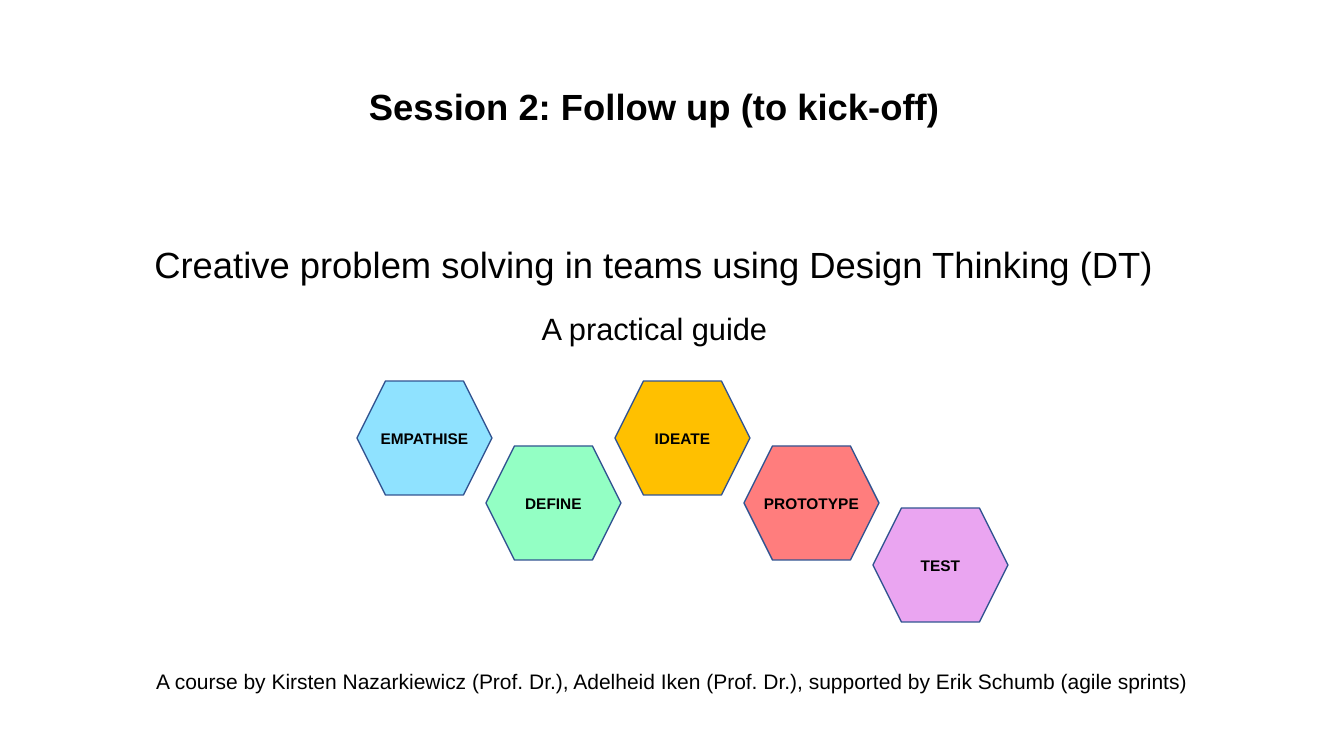
from pptx import Presentation
from pptx.dml.color import RGBColor
from pptx.enum.shapes import MSO_SHAPE
from pptx.enum.text import MSO_ANCHOR, PP_ALIGN
from pptx.util import Emu, Pt

PX = 914400 / 100.8
FONT = "Arial"
COLOURS = {
    "text": "000000",
    "outline": "325491",
    "empathise": "8FE2FF",
    "define": "93FFC4",
    "ideate": "FFC000",
    "prototype": "FF7D7D",
    "test": "EAA5F1",
}
PHASES = [("EMPATHISE", 0), ("DEFINE", 65), ("IDEATE", 0), ("PROTOTYPE", 65), ("TEST", 127)]


def px(length):
    """Turn a length in px into EMU."""
    return Emu(round(length * PX))


def colour(name):
    """Look up a colour by name."""
    return RGBColor.from_string(COLOURS[name])


def place(shape, box):
    """Move and size a shape to a box given in px."""
    shape.left, shape.top, shape.width, shape.height = map(px, box)


def format_paragraph(para, size, bold=False):
    """Centre a paragraph and set its font."""
    para.alignment = PP_ALIGN.CENTER
    para.font.name = FONT
    para.font.size = Pt(size)
    para.font.bold = bold
    para.font.color.rgb = colour("text")


def add_title(page, box, text):
    """Fill the title placeholder with the session heading."""
    title = page.shapes.title
    place(title, box)
    title.text_frame.text = text
    title.text_frame.vertical_anchor = MSO_ANCHOR.TOP
    para = title.text_frame.paragraphs[0]
    format_paragraph(para, 26, bold=True)
    para.line_spacing = 1.2
    para.space_before = Pt(0)


def add_subject(page, box, subject, subtitle):
    """Add the course subject with its subtitle below."""
    frame = page.shapes.add_textbox(*map(px, box)).text_frame
    frame.word_wrap = True
    frame.text = f"{subject}\n{subtitle}"
    for para, size, gap in zip(frame.paragraphs, (26, 22), (0, 12)):
        format_paragraph(para, size)
        para.line_spacing = 1.2
        para.space_before = Pt(gap)


def add_phases(page, box):
    """Add the staggered hexagons of the process, evenly stepped across the box."""
    left, top, width, height = box
    hexagon_width, hexagon_height = 135, 114
    step = (width - hexagon_width) / (len(PHASES) - 1)
    for index, (label, drop) in enumerate(PHASES):
        hexagon = page.shapes.add_shape(
            MSO_SHAPE.HEXAGON, px(left + index * step), px(top + drop),
            px(hexagon_width), px(hexagon_height))
        hexagon.shadow.inherit = False
        hexagon.fill.solid()
        hexagon.fill.fore_color.rgb = colour(label.lower())
        hexagon.line.color.rgb = colour("outline")
        hexagon.line.width = Pt(1)
        frame = hexagon.text_frame
        frame.word_wrap = False
        frame.vertical_anchor = MSO_ANCHOR.MIDDLE
        frame.margin_left = frame.margin_right = 0
        frame.text = label
        format_paragraph(frame.paragraphs[0], 11, bold=True)


def add_credits(page, box, text):
    """Add the line that names the course leaders."""
    frame = page.shapes.add_textbox(*map(px, box)).text_frame
    frame.word_wrap = True
    frame.margin_left = frame.margin_right = frame.margin_top = frame.margin_bottom = 0
    frame.text = text
    format_paragraph(frame.paragraphs[0], 15)


def main():
    """Build the deck and save it."""
    deck = Presentation()
    deck.slide_width, deck.slide_height = px(1344), px(756)
    page = deck.slides.add_slide(deck.slide_layouts[5])
    add_title(page, (51, 70, 1207, 60), "Session 2: Follow up (to kick-off)")
    add_subject(page, (51, 228, 1207, 120),
                "Creative problem solving in teams using Design Thinking (DT)",
                "A practical guide")
    add_phases(page, (357, 381, 651, 241))
    add_credits(page, (80, 669, 1184, 33),
                "A course by Kirsten Nazarkiewicz (Prof. Dr.), Adelheid Iken (Prof. Dr.), "
                "supported by Erik Schumb (agile sprints)")
    deck.save("out.pptx")


if __name__ == "__main__":
    main()
